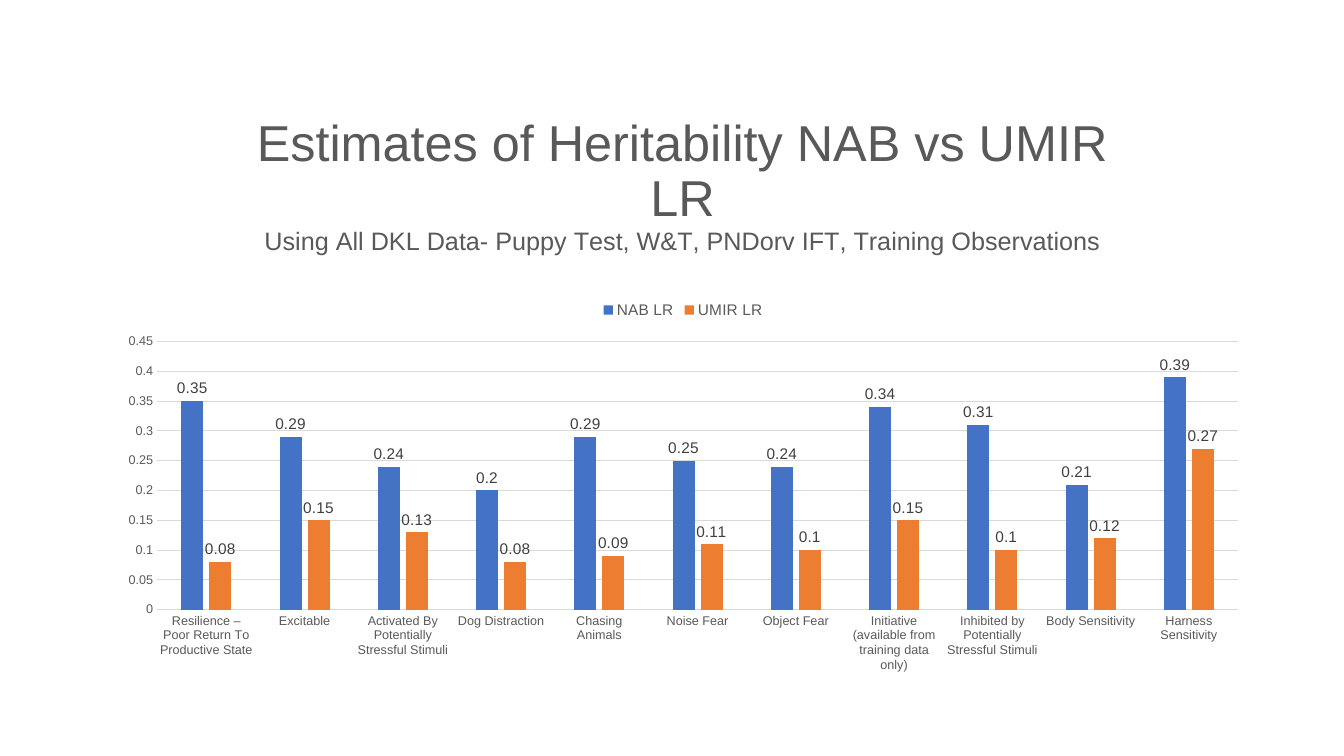
"""Build a slide with a clustered column chart of heritability estimates."""
from lxml import etree
from pptx import Presentation
from pptx.chart.data import CategoryChartData
from pptx.dml.color import RGBColor
from pptx.enum.chart import XL_CHART_TYPE, XL_LABEL_POSITION, XL_LEGEND_POSITION, XL_TICK_MARK
from pptx.oxml.ns import qn
from pptx.util import Pt

COLUMNS = XL_CHART_TYPE.COLUMN_CLUSTERED
ABOVE = XL_LABEL_POSITION.OUTSIDE_END
TOP = XL_LEGEND_POSITION.TOP
NO_TICK = XL_TICK_MARK.NONE

FONT = "Arial"
GREY, DARK, PALE = "595959", "404040", "D9D9D9"
HEADING = [
    ("Estimates of Heritability NAB vs UMIR LR", 36),
    ("Using All DKL Data- Puppy Test, W&T, PNDorv IFT, Training Observations", 18),
]
ESTIMATES = [
    ("Resilience – Poor Return To Productive State", 0.35, 0.08),
    ("Excitable", 0.29, 0.15),
    ("Activated By Potentially Stressful Stimuli", 0.24, 0.13),
    ("Dog Distraction", 0.2, 0.08),
    ("Chasing Animals", 0.29, 0.09),
    ("Noise Fear", 0.25, 0.11),
    ("Object Fear", 0.24, 0.1),
    ("Initiative (available from training data only)", 0.34, 0.15),
    ("Inhibited by Potentially Stressful Stimuli", 0.31, 0.1),
    ("Body Sensitivity", 0.21, 0.12),
    ("Harness Sensitivity", 0.39, 0.27),
]
GROUPS = [("NAB LR", "4472C4"), ("UMIR LR", "ED7D31")]
CHART_BOX = (75, 67, 825, 422)
PLOT_BOX = (37.3, 177, 772, 191.6)
LEGEND_BOX = (352, 147, 122, 15)


def rgb(value):
    return RGBColor.from_string(value)


def style(font, size, color):
    font.name, font.size, font.bold = FONT, Pt(size), False
    font.color.rgb = rgb(color)


def draw_line(line, color):
    line.color.rgb = rgb(color)
    line.width = Pt(0.75)


def place(element, box, index, inner=False):
    for old in element.findall(qn("c:layout")):
        element.remove(old)
    layout = etree.Element(qn("c:layout"))
    manual = etree.SubElement(layout, qn("c:manualLayout"))
    settings = [("layoutTarget", "inner")] if inner else []
    settings += [("xMode", "edge"), ("yMode", "edge")]
    settings += [(key, f"{part / whole:.4f}") for key, part, whole
                 in zip("xywh", box, CHART_BOX[2:] * 2)]
    for tag, value in settings:
        etree.SubElement(manual, qn(f"c:{tag}")).set("val", value)
    element.insert(index, layout)


def main():
    prs = Presentation()
    prs.slide_width, prs.slide_height = Pt(960), Pt(540)
    slide = prs.slides.add_slide(prs.slide_layouts[6])

    data = CategoryChartData()
    traits, *estimates = zip(*ESTIMATES)
    data.categories = traits
    for (group, _), values in zip(GROUPS, estimates):
        data.add_series(group, values)
    chart = slide.shapes.add_chart(COLUMNS, *map(Pt, CHART_BOX), data).chart
    style(chart.font, 10, "000000")

    heading = chart.chart_title.text_frame
    heading.text = "\n".join(text for text, _ in HEADING)
    for paragraph, (_, size) in zip(heading.paragraphs, HEADING):
        style(paragraph.font, size, GREY)
        style(paragraph.runs[0].font, size, GREY)
    chart.chart_title.include_in_layout = False

    chart.has_legend = True
    chart.legend.position = TOP
    chart.legend.include_in_layout = False
    style(chart.legend.font, 11, GREY)

    traits_axis, scale = chart.category_axis, chart.value_axis
    for axis in (traits_axis, scale):
        axis.major_tick_mark = axis.minor_tick_mark = NO_TICK
        style(axis.tick_labels.font, 9, GREY)
    draw_line(traits_axis.format.line, PALE)
    scale.format.line.fill.background()
    draw_line(scale.major_gridlines.format.line, PALE)
    scale.minimum_scale, scale.maximum_scale, scale.major_unit = 0, 0.45, 0.05

    plot = chart.plots[0]
    plot.gap_width, plot.overlap = 219, -27
    plot.vary_by_categories = False
    for series, (_, color) in zip(plot.series, GROUPS):
        series.format.fill.solid()
        series.format.fill.fore_color.rgb = rgb(color)
        labels = series.data_labels
        labels.show_value = True
        labels.position = ABOVE
        style(labels.font, 11, DARK)

    place(chart.element.find(".//" + qn("c:plotArea")), PLOT_BOX, 0, inner=True)
    place(chart.element.find(".//" + qn("c:legend")), LEGEND_BOX, 1)
    prs.save("out.pptx")


if __name__ == "__main__":
    main()
